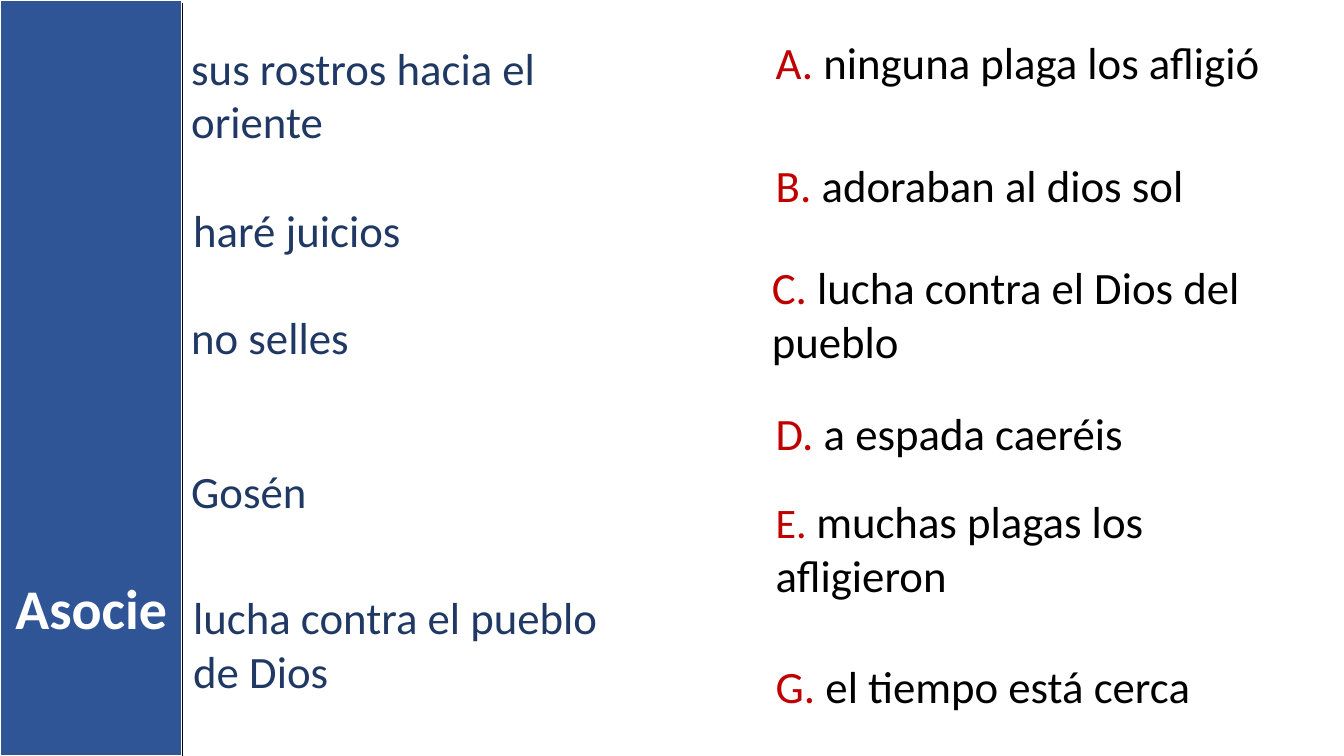
from dataclasses import dataclass

from lxml.etree import SubElement
from pptx import Presentation
from pptx.dml.color import RGBColor
from pptx.enum.shapes import MSO_CONNECTOR, MSO_SHAPE
from pptx.enum.text import MSO_ANCHOR, MSO_AUTO_SIZE, PP_ALIGN
from pptx.oxml.ns import qn
from pptx.util import Cm, Pt

TITLE = "Asocie"
# left, top, width in cm, number of lines, text
CLUES = [
    (4.57, 0.89, 11.61, 2, "sus rostros hacia el oriente"),
    (4.62, 4.98, 13.61, 1, "haré juicios"),
    (4.57, 7.67, 13.11, 1, "no selles"),
    (4.57, 11.56, 12.73, 1, "Gosén"),
    (4.62, 14.73, 11.2, 2, "lucha contra el pueblo de Dios"),
]
# left, top, width in cm, number of lines, letter, letter size, text
ANSWERS = [
    (19.3, 0.74, 14.17, 1, "A. ", 32, "ninguna plaga los afligió"),
    (19.3, 3.86, 13.94, 1, "B. ", 32, "adoraban al dios sol"),
    (19.2, 6.43, 13.39, 2, "C. ", 32, "lucha contra el Dios del pueblo"),
    (19.3, 10.11, 14.17, 1, "D. ", 32, "a espada caeréis"),
    (19.3, 12.32, 13.94, 2, "E. ", 30, "muchas plagas los afligieron"),
    (19.3, 16.48, 13.21, 1, "G. ", 32, "el tiempo está cerca"),
]
WIDE, HIGH, BAND = 33.87, 19.05, 4.6
LINE, PAD = 1.37, 0.26


@dataclass(frozen=True)
class Theme:
    font: str = "Calibri"
    head: int = 40
    body: int = 32
    band: str = "2F5597"
    clue: str = "203864"
    mark: str = "C00000"
    ink: str = "000000"
    pale: str = "FFFFFF"


LOOK = Theme()


def tint(code):
    return RGBColor.from_string(code)


def add_run(para, text, size, color, bold=False):
    run = para.add_run()
    run.text = text
    font = run.font
    font.name, font.size, font.bold = LOOK.font, Pt(size), bold
    font.color.rgb = tint(color)


def add_text(slide, left, top, width, lines, runs):
    """Place one item; runs are (text, size, color) tuples."""
    box = slide.shapes.add_textbox(
        Cm(left), Cm(top), Cm(width), Cm(lines * LINE + PAD))
    frame = box.text_frame
    frame.word_wrap = True
    frame.auto_size = MSO_AUTO_SIZE.SHAPE_TO_FIT_TEXT
    for run in runs:
        add_run(frame.paragraphs[0], *run)


def add_band(slide):
    band = slide.shapes.add_shape(
        MSO_SHAPE.RECTANGLE, 0, 0, Cm(BAND), Cm(HIGH))
    band.shadow.inherit = False
    band.fill.solid()
    band.fill.fore_color.rgb = tint(LOOK.band)
    band.line.color.rgb = tint(LOOK.pale)
    band.line.width = Pt(1.5)
    return band


def set_title(slide, band):
    title = slide.shapes.title
    title.element.addprevious(band.element)
    title.left, title.top = Cm(0), Cm(14.33)
    title.width, title.height = Cm(BAND), Cm(1.96)
    frame = title.text_frame
    frame.word_wrap = True
    frame.auto_size = MSO_AUTO_SIZE.SHAPE_TO_FIT_TEXT
    frame.vertical_anchor = MSO_ANCHOR.TOP
    para = frame.paragraphs[0]
    para.alignment = PP_ALIGN.CENTER
    add_run(para, TITLE, LOOK.head, LOOK.pale, True)


def add_edge(slide):
    edge = slide.shapes.add_connector(
        MSO_CONNECTOR.STRAIGHT, Cm(BAND), Cm(0.08), Cm(BAND), Cm(HIGH))
    edge.line.color.rgb = tint(LOOK.ink)
    edge.line.width = Pt(1)
    SubElement(edge.element.spPr, qn("a:effectLst"))


def main():
    deck = Presentation()
    deck.slide_width, deck.slide_height = Cm(WIDE), Cm(HIGH)
    slide = deck.slides.add_slide(deck.slide_layouts[5])
    set_title(slide, add_band(slide))
    for *place, text in CLUES:
        add_text(slide, *place, [(text, LOOK.body, LOOK.clue)])
    for *place, mark, size, text in ANSWERS:
        add_text(slide, *place, [(mark, size, LOOK.mark),
                                 (text, LOOK.body, LOOK.ink)])
    add_edge(slide)
    deck.save("out.pptx")


if __name__ == "__main__":
    main()
